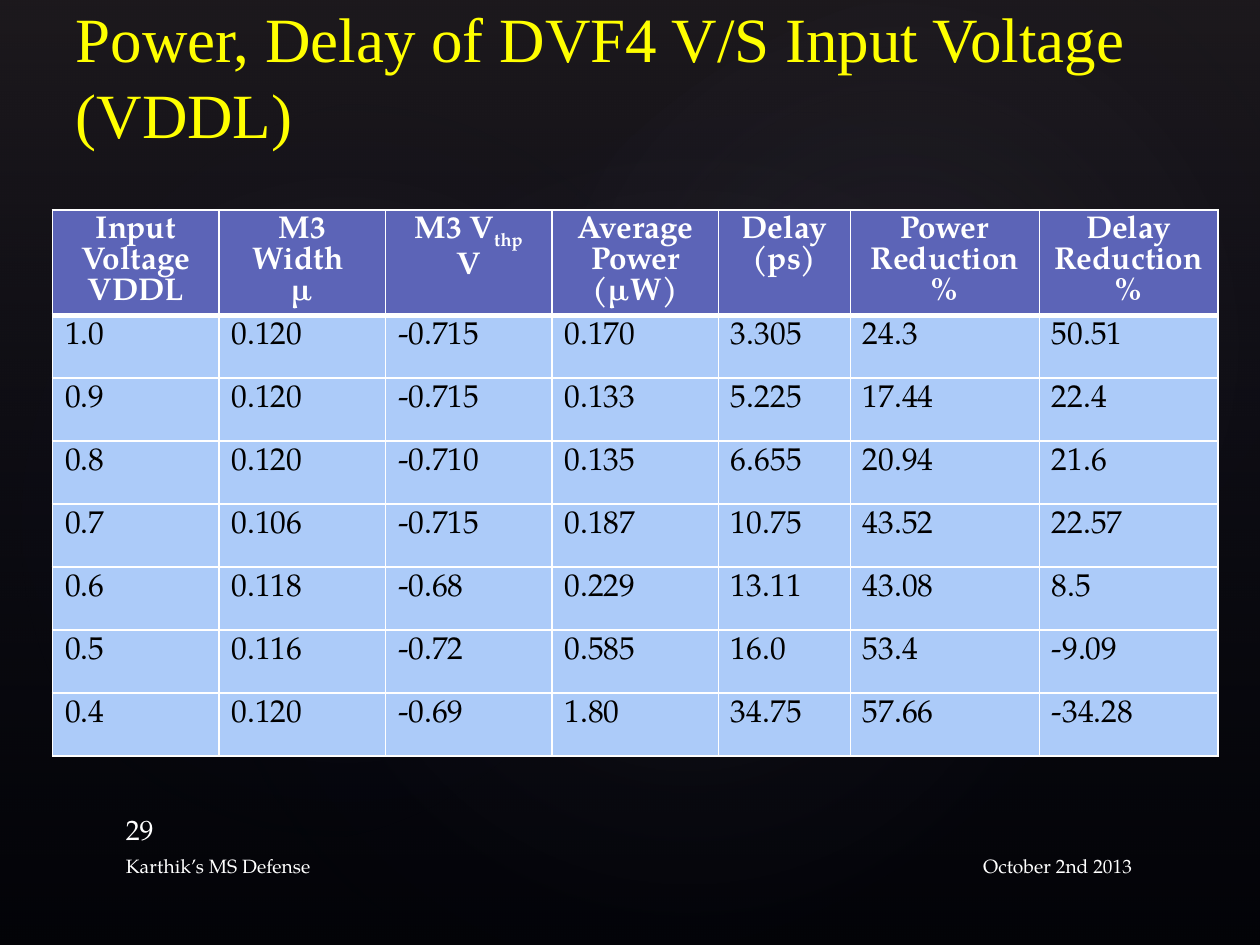
"""Build the DVF4 power and delay slide with its results table."""
from dataclasses import dataclass

from lxml import etree
from pptx import Presentation
from pptx.dml.color import RGBColor
from pptx.enum import shapes, text
from pptx.oxml import ns
from pptx.util import Pt

LEFT, CENTER, RIGHT = text.PP_ALIGN.LEFT, text.PP_ALIGN.CENTER, text.PP_ALIGN.RIGHT
TOP, BOTTOM = text.MSO_ANCHOR.TOP, text.MSO_ANCHOR.BOTTOM


@dataclass(frozen=True)
class Theme:
    font: str = "TeX Gyre Pagella"
    title_font: str = "Times New Roman"
    back: str = "000000"
    title: str = "FFFF00"
    light: str = "FFFFFF"
    dark: str = "000000"
    head_fill: str = "5C64B7"
    body_fill: str = "ACCBF9"
    glow: str = "C4BCC6"
    haze: str = "504652"
    navy: str = "242852"
    title_size: float = 36
    table_size: float = 18
    number_size: float = 16
    footer_size: float = 11


@dataclass(frozen=True)
class Box:
    left: float
    top: float
    width: float
    height: float

    def emu(self) -> tuple:
        return tuple(Pt(v) for v in (self.left, self.top, self.width, self.height))


@dataclass(frozen=True)
class Glow:
    box: Box
    rotation: float
    alpha: int


@dataclass(frozen=True)
class Label:
    text: str
    box: Box
    size: float
    align: int = LEFT
    anchor: int = TOP
    bottom: float = 3.6


T = Theme()
PAGE = Box(0, 0, 720, 540)
TITLE = "Power, Delay of DVF4 V/S Input Voltage (VDDL)"
TITLE_BOX = Box(36, 18, 642, 72)
GLOWS = (
    Glow(Box(108, 82, 570, 449), 328.7, 7),
    Glow(Box(-21.6, 92, 436, 353), 294.3, 8),
    Glow(Box(258, 9.4, 510, 374), 328.7, 8),
)
LABELS = (
    Label("October 2nd 2013", Box(486, 484.5, 168, 28.8), T.footer_size, RIGHT),
    Label("29", Box(64.8, 460, 168, 24), T.number_size, anchor=BOTTOM, bottom=0.7),
    Label("Karthik’s MS Defense", Box(64.8, 484.5, 360, 28.8), T.footer_size),
)
COLUMNS = (95.15, 95.15, 95.15, 95.15, 75.4, 108, 102)
ROW_HEIGHT = 36
HEADERS = ("Input Voltage\nVDDL", "M3 Width \nµ", "M3 V_thp\nV", "Average Power\n(µW)",
           "Delay\n(ps)", "Power Reduction\n%", "Delay Reduction\n%")
VALUES = (
    ("1.0", "0.120", "-0.715", "0.170", "3.305", "24.3", "50.51"),
    ("0.9", "0.120", "-0.715", "0.133", "5.225", "17.44", "22.4"),
    ("0.8", "0.120", "-0.710", "0.135", "6.655", "20.94", "21.6"),
    ("0.7", "0.106", "-0.715", "0.187", "10.75", "43.52", "22.57"),
    ("0.6", "0.118", "-0.68", "0.229", "13.11", "43.08", "8.5"),
    ("0.5", "0.116", "-0.72", "0.585", "16.0", "53.4", "-9.09"),
    ("0.4", "0.120", "-0.69", "1.80", "34.75", "57.66", "-34.28"),
)


def write(tf, content: str, *, size: float, color: str, font: str = T.font,
          bold: bool = False, align: int = LEFT) -> None:
    """Fill a text frame; a newline starts a paragraph, an underscore a subscript."""
    for i, line in enumerate(content.split("\n")):
        p = tf.paragraphs[0] if i == 0 else tf.add_paragraph()
        p.alignment = align
        for j, part in enumerate(line.split("_")):
            r = p.add_run()
            r.text = part
            r.font.name, r.font.size, r.font.bold = font, Pt(size), bold
            r.font.color.rgb = RGBColor.from_string(color)
            if j:
                r.font._element.set("baseline", "-25000")


def add_element(parent, tag: str, **attrs):
    """Append a DrawingML element with the given attributes."""
    return etree.SubElement(parent, ns.qn(tag), {k: str(v) for k, v in attrs.items()})


def add_gradient(slide, kind: int, box: Box, stops: tuple, rotation: float = 0,
                 radial: bool = False) -> None:
    """Draw a borderless shape with a translucent gradient of (position, color, alpha)."""
    sp = slide.shapes.add_shape(kind, *box.emu())
    sp.rotation, sp.shadow.inherit = rotation, False
    sp.line.fill.background()
    grad = etree.Element(ns.qn("a:gradFill"), rotWithShape="1")
    stop_list = add_element(grad, "a:gsLst")
    for position, color, alpha in stops:
        stop = add_element(stop_list, "a:gs", pos=position * 1000)
        add_element(add_element(stop, "a:srgbClr", val=color), "a:alpha", val=alpha * 1000)
    if radial:
        center = add_element(grad, "a:path", path="circle")
        add_element(center, "a:fillToRect", l=50000, t=50000, r=50000, b=50000)
    else:
        add_element(grad, "a:lin", ang=5400000, scaled=0)
    sp._element.spPr.find(ns.qn("a:prstGeom")).addnext(grad)


def format_cell(cell, content: str, head: bool, top: float, bottom: float) -> None:
    """Write one table cell and set its fill and borders."""
    write(cell.text_frame, content, size=T.table_size, color=T.light if head else T.dark,
          bold=head, align=CENTER if head else LEFT)
    tc_pr = cell._tc.get_or_add_tcPr()
    for side, width in (("L", 1), ("R", 1), ("T", top), ("B", bottom)):
        line = add_element(tc_pr, f"a:ln{side}", w=Pt(width))
        add_element(add_element(line, "a:solidFill"), "a:srgbClr", val=T.light)
    cell.fill.solid()
    cell.fill.fore_color.rgb = RGBColor.from_string(T.head_fill if head else T.body_fill)


def add_results(slide) -> None:
    """Draw the results table."""
    rows = (HEADERS, *VALUES)
    box = Box(30, 120, sum(COLUMNS), ROW_HEIGHT * len(rows))
    table = slide.shapes.add_table(len(rows), len(COLUMNS), *box.emu()).table
    table.horz_banding = False
    for column, width in zip(table.columns, COLUMNS):
        column.width = Pt(width)
    for i, row in enumerate(rows):
        for j, content in enumerate(row):
            format_cell(table.cell(i, j), content, i == 0,
                        top=3 if i == 1 else 1, bottom=3 if i == 0 else 1)


def add_title(slide) -> None:
    """Place the title placeholder in front of the background shapes."""
    sp = slide.shapes.title
    sp.left, sp.top, sp.width, sp.height = TITLE_BOX.emu()
    tf = sp.text_frame
    tf.word_wrap, tf.auto_size = True, text.MSO_AUTO_SIZE.NONE
    tf.vertical_anchor = BOTTOM
    write(tf, TITLE, size=T.title_size, color=T.title, font=T.title_font)
    slide.shapes._spTree.append(sp._element)


def add_label(slide, label: Label) -> None:
    """Draw one footer text box."""
    tf = slide.shapes.add_textbox(*label.box.emu()).text_frame
    tf.word_wrap, tf.vertical_anchor = True, label.anchor
    tf.margin_bottom = Pt(label.bottom)
    write(tf, label.text, size=label.size, color=T.light, align=label.align)


def main() -> None:
    """Assemble and save the slide."""
    prs = Presentation()
    prs.slide_width, prs.slide_height = Pt(PAGE.width), Pt(PAGE.height)
    s = prs.slides.add_slide(prs.slide_layouts[5])
    s.background.fill.solid()
    s.background.fill.fore_color.rgb = RGBColor.from_string(T.back)
    add_gradient(s, shapes.MSO_SHAPE.RECTANGLE, PAGE, ((0, T.haze, 36), (100, T.navy, 10)))
    for glow in GLOWS:
        add_gradient(s, shapes.MSO_SHAPE.OVAL, glow.box,
                     ((0, T.glow, glow.alpha), (58, T.navy, 0)), glow.rotation, radial=True)
    add_results(s)
    add_title(s)
    for label in LABELS:
        add_label(s, label)
    prs.save("out.pptx")


if __name__ == "__main__":
    main()
